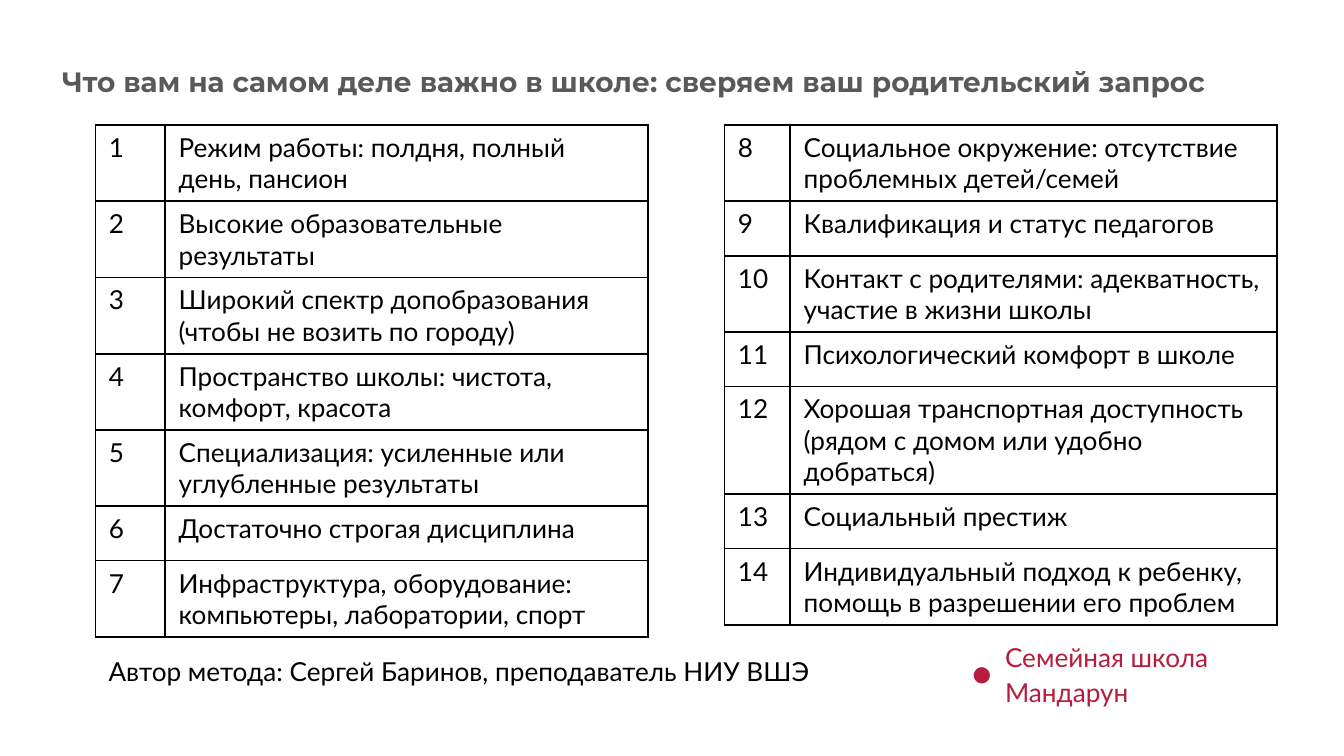
from typing import NamedTuple

from lxml import etree
from pptx import Presentation
from pptx.dml.color import RGBColor
from pptx.enum.shapes import MSO_SHAPE
from pptx.enum.text import MSO_ANCHOR, MSO_AUTO_SIZE, PP_ALIGN
from pptx.oxml.ns import qn
from pptx.util import Inches, Pt

OVAL = MSO_SHAPE.OVAL
TOP = MSO_ANCHOR.TOP
LEFT = PP_ALIGN.LEFT
FIXED, GROW = MSO_AUTO_SIZE.NONE, MSO_AUTO_SIZE.SHAPE_TO_FIT_TEXT

WHITE = RGBColor(0xFF, 0xFF, 0xFF)
BLACK = RGBColor(0x00, 0x00, 0x00)
GRAY = RGBColor(0x58, 0x59, 0x5B)
CRIMSON = RGBColor(0xB6, 0x1C, 0x3D)

# A 16:9 page
SLIDE_WIDTH = Inches(10)
SLIDE_HEIGHT = SLIDE_WIDTH * 9 // 16
TABLE_TOP, ROW_HEIGHT = Inches(0.93), Pt(29.2)
LEFT_MARGIN = Inches(0.71)


class Checklist(NamedTuple):
    """A numbered table of school criteria."""
    left: int
    number_width: int
    text_width: int
    first_number: int
    criteria: tuple[str, ...]


CHECKLISTS = (
    Checklist(LEFT_MARGIN, Inches(0.52), Inches(3.59), 1, (
        "Режим работы: полдня, полный день, пансион",
        "Высокие образовательные результаты",
        "Широкий спектр допобразования (чтобы не возить по городу)",
        "Пространство школы: чистота, комфорт, красота",
        "Специализация: усиленные или углубленные результаты",
        "Достаточно строгая дисциплина",
        "Инфраструктура, оборудование: компьютеры, лаборатории, спорт",
    )),
    Checklist(Inches(5.39), Inches(0.49), Inches(3.62), 8, (
        "Социальное окружение: отсутствие проблемных детей/семей",
        "Квалификация и статус педагогов",
        "Контакт с родителями: адекватность, участие в жизни школы",
        "Психологический комфорт в школе",
        "Хорошая транспортная доступность (рядом с домом или удобно добраться)",
        "Социальный престиж",
        "Индивидуальный подход к ребенку, помощь в разрешении его проблем",
    )),
)


def write(frame, text: str, color: RGBColor, font: str = "Lato",
          size: int = 14, bold: bool = False):
    """Fill a text frame with one formatted paragraph and return it."""
    frame.text = text
    para = frame.paragraphs[0]
    para.font.name = font
    para.font.size = Pt(size)
    para.font.bold = bold
    para.font.color.rgb = color
    return para


def add_label(shapes, left: int, top: int, width: int, height: int,
              text: str, color: RGBColor):
    """Add a wrapping text box that grows with its text."""
    box = shapes.add_textbox(left, top, width, height)
    box.text_frame.word_wrap = True
    box.text_frame.auto_size = GROW
    return write(box.text_frame, text, color)


def add_borders(cell) -> None:
    """Draw a thin black line on every side of a cell."""
    properties = cell._tc.get_or_add_tcPr()
    for side in ("a:lnL", "a:lnR", "a:lnT", "a:lnB"):
        line = etree.SubElement(properties, qn(side), w=str(Pt(1)))
        fill = etree.SubElement(line, qn("a:solidFill"))
        etree.SubElement(fill, qn("a:srgbClr"), val=str(BLACK))


def add_checklist(shapes, checklist: Checklist) -> None:
    """Add a table with a number and a criterion in each row."""
    row_count = len(checklist.criteria)
    table = shapes.add_table(
        row_count, 2, checklist.left, TABLE_TOP,
        checklist.number_width + checklist.text_width,
        ROW_HEIGHT * row_count).table
    table.first_row = False
    table.horz_banding = False
    table.columns[0].width = checklist.number_width
    table.columns[1].width = checklist.text_width
    for row, criterion in enumerate(checklist.criteria):
        number = str(checklist.first_number + row)
        for cell, text in zip(table.rows[row].cells, (number, criterion)):
            add_borders(cell)
            cell.fill.solid()
            cell.fill.fore_color.rgb = WHITE
            write(cell.text_frame, text, BLACK)


def add_school_mark(shapes) -> None:
    """Add the school name with a round marker as one group."""
    group = shapes.add_group_shape()
    para = add_label(group.shapes, Inches(7.38), Inches(4.7), Inches(2.44),
                     Inches(0.35), "Семейная школа Мандарун", CRIMSON)
    para.line_spacing = 1.1
    dot = group.shapes.add_shape(OVAL, Inches(7.23), Inches(4.95),
                                 Inches(0.15), Inches(0.15))
    dot.shadow.inherit = False
    dot.fill.solid()
    dot.fill.fore_color.rgb = CRIMSON
    dot.line.color.rgb = WHITE
    dot.line.width = Pt(2)


def main() -> None:
    deck = Presentation()
    deck.slide_width, deck.slide_height = SLIDE_WIDTH, SLIDE_HEIGHT
    page = deck.slides.add_slide(deck.slide_layouts.get_by_name("Title Only"))

    # Title
    title = page.shapes.title
    title.left, title.top = Inches(0.36), Inches(0.38)
    title.width, title.height = Inches(8.93), Inches(0.63)
    frame = title.text_frame
    frame.auto_size = FIXED
    frame.word_wrap = True
    frame.vertical_anchor = TOP
    frame.margin_left = frame.margin_right = Inches(0.1)
    frame.margin_top = frame.margin_bottom = Inches(0.1)
    para = write(
        frame,
        "Что вам на самом деле важно в школе: сверяем ваш родительский запрос",
        GRAY, "Montserrat", 15, bold=True)
    para.alignment = LEFT

    # School name, criteria tables and author line
    add_school_mark(page.shapes)
    for checklist in CHECKLISTS:
        add_checklist(page.shapes, checklist)
    add_label(page.shapes, LEFT_MARGIN, Inches(4.83), Inches(5.58),
              Inches(0.34),
              "Автор метода: Сергей Баринов, преподаватель НИУ ВШЭ", BLACK)

    deck.save("out.pptx")


if __name__ == "__main__":
    main()
